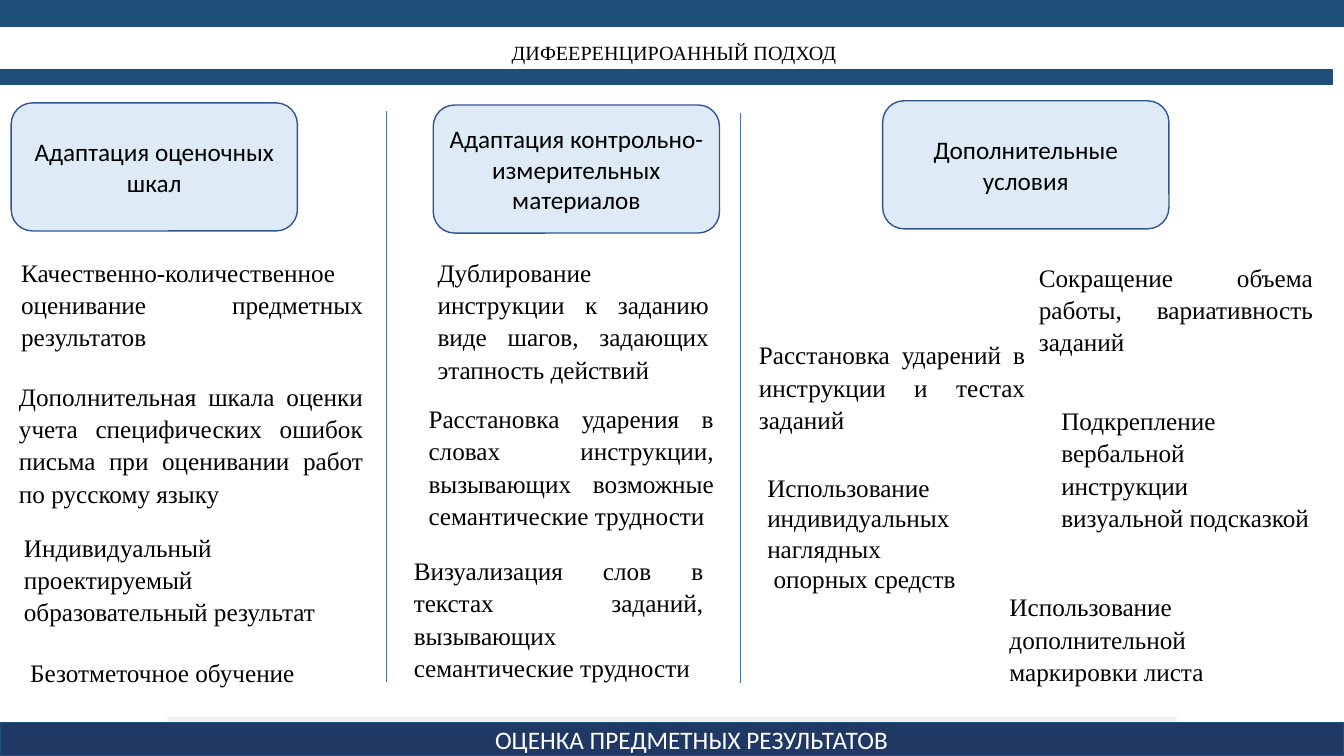
"""Build the slide on a differentiated approach to assessing subject results."""
from dataclasses import dataclass

from lxml import etree
from pptx import Presentation
from pptx import util as u
from pptx.dml.color import RGBColor
from pptx.enum import shapes, text
from pptx.oxml.ns import qn


@dataclass(frozen=True)
class Theme:
    band: str = "1F4E79"
    footer: str = "203864"
    strip: str = "F2F2F2"
    card: str = "DEEBF7"
    card_line: str = "325491"
    divider: str = "4472C4"
    ink: str = "000000"
    light: str = "FFFFFF"
    sans: str = "Calibri"
    serif: str = "Times New Roman"
    body_size: float = 18
    title_size: float = 14.4


class SlideBuilder:
    def __init__(self, presentation, theme):
        self.theme = theme
        self.slide = presentation.slides.add_slide(presentation.slide_layouts[5])

    def add_run(self, paragraph, words, font, color, size):
        run = paragraph.add_run()
        run.text = words
        run.font.name = font
        run.font.size = u.Pt(size)
        run.font.color.rgb = RGBColor.from_string(color)

    def title(self, words, *box):
        shape = self.slide.shapes.title
        shape.left, shape.top, shape.width, shape.height = map(u.Pt, box)
        frame = shape.text_frame
        frame.auto_size = text.MSO_AUTO_SIZE.NONE
        frame.vertical_anchor = text.MSO_ANCHOR.MIDDLE
        paragraph = frame.paragraphs[0]
        paragraph.alignment = text.PP_ALIGN.CENTER
        paragraph.line_spacing = 0.9
        self.add_run(paragraph, words, self.theme.serif, self.theme.ink, self.theme.title_size)

    def block(self, kind, fill, line, *box):
        shape = self.slide.shapes.add_shape(kind, *map(u.Pt, box))
        shape.shadow.inherit = False
        shape.fill.solid()
        shape.fill.fore_color.rgb = RGBColor.from_string(fill)
        shape.line.color.rgb = RGBColor.from_string(line)
        shape.line.width = u.Pt(1)
        return shape

    def bar(self, fill, line, *box):
        return self.block(shapes.MSO_SHAPE.RECTANGLE, fill, line, *box)

    def label(self, shape, words, color):
        frame = shape.text_frame
        frame.word_wrap = True
        frame.vertical_anchor = text.MSO_ANCHOR.MIDDLE
        paragraph = frame.paragraphs[0]
        paragraph.alignment = text.PP_ALIGN.CENTER
        self.add_run(paragraph, words, self.theme.sans, color, self.theme.body_size)

    def card(self, words, left, top):
        shape = self.block(shapes.MSO_SHAPE.ROUNDED_RECTANGLE, self.theme.card,
                           self.theme.card_line, left, top, 204.5, 91.5)
        self.label(shape, words, self.theme.ink)

    def footer(self, words, *box):
        shape = self.bar(self.theme.footer, self.theme.band, *box)
        shape.text_frame.margin_left = u.Pt(35)
        self.label(shape, words, self.theme.light)

    def divider(self, left, top, length):
        line = self.slide.shapes.add_connector(
            shapes.MSO_CONNECTOR.STRAIGHT, u.Pt(left), u.Pt(top), u.Pt(left), u.Pt(top + length))
        line.line.color.rgb = RGBColor.from_string(self.theme.divider)
        line.line.width = u.Pt(0.5)
        etree.SubElement(line._element.spPr, qn("a:effectLst"))

    def note(self, lines, *box, spacing=1.07, after=8):
        frame = self.slide.shapes.add_textbox(*map(u.Pt, box)).text_frame
        frame.word_wrap = True
        frame.auto_size = text.MSO_AUTO_SIZE.SHAPE_TO_FIT_TEXT
        for index, words in enumerate(lines):
            paragraph = frame.add_paragraph() if index else frame.paragraphs[0]
            paragraph.alignment = text.PP_ALIGN.JUSTIFY
            paragraph.line_spacing = spacing
            paragraph.space_after = u.Pt(after)
            if index:
                paragraph._p.get_or_add_pPr().set("marL", str(u.Pt(4.5)))
            self.add_run(paragraph, words, self.theme.serif, self.theme.ink, self.theme.body_size)


CARDS = [
    ("Адаптация оценочных шкал", 8, 73.5),
    ("Адаптация контрольно-измерительных материалов", 309.5, 75),
    ("Дополнительные условия", 630.5, 72),
]

NOTES = [
    ("Качественно-количественное оценивание предметных результатов", 8, 178.5, 258.5, 76),
    ("Дополнительная шкала оценки учета специфических ошибок письма при оценивании работ "
     "по русскому языку", 6.5, 267, 260, 99.5),
    ("Индивидуальный проектируемый образовательный результат", 10, 375, 237.5, 76),
    ("Дублирование инструкции к заданию виде шагов, задающих этапность действий",
     305.5, 178.5, 208, 101),
    ("Расстановка ударения в словах инструкции, вызывающих возможные семантические трудности",
     299, 283, 218, 99.5),
    ("Визуализация слов в текстах заданий, вызывающих семантические трудности",
     288.5, 391.5, 221, 101),
    ("Расстановка ударений в инструкции и тестах заданий", 535, 237.5, 204.5, 77),
    ("Сокращение объема работы, вариативность заданий", 735, 182, 210, 77),
    ("Подкрепление вербальной инструкции визуальной подсказкой", 751, 284.5, 194.5, 99.5),
    ("Использование дополнительной маркировки листа", 714, 417.5, 168, 77),
]


def main():
    presentation = Presentation()
    presentation.slide_width = u.Pt(960)
    presentation.slide_height = u.Pt(540)
    theme = Theme()
    builder = SlideBuilder(presentation, theme)

    builder.bar(theme.strip, theme.strip, 120, 512.5, 720, 21.5)
    builder.bar(theme.band, theme.band, 0, 0, 960, 18.5)
    builder.bar(theme.band, theme.band, 0, 50, 952, 10)
    builder.footer("ОЦЕНКА ПРЕДМЕТНЫХ РЕЗУЛЬТАТОВ", 0, 516, 960, 24)
    builder.title("ДИФЕЕРЕНЦИРОАННЫЙ ПОДХОД", 67.5, 29, 828, 18.5)

    for words, left, top in CARDS:
        builder.card(words, left, top)
    for left, top in ((276, 79.5), (528.5, 80.5)):
        builder.divider(left, top, 407.5)
    for words, *box in NOTES:
        builder.note([words], *box)
    builder.note(["Использование индивидуальных наглядных", "опорных средств"],
                 541, 334, 210, 94.5, spacing=1.0, after=0)
    builder.note(["Безотметочное обучение"], 14.5, 466, 227, 29, spacing=1.0, after=0)

    presentation.save("out.pptx")


if __name__ == "__main__":
    main()
